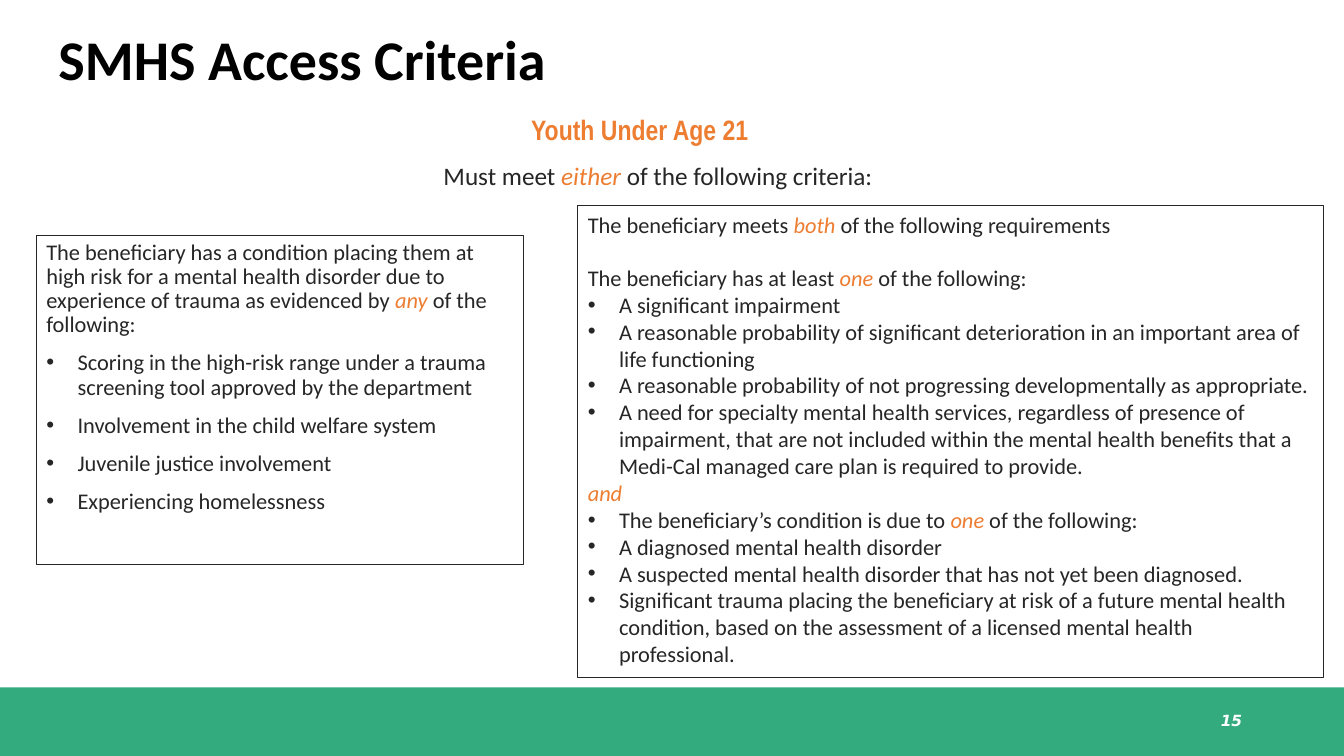
from lxml import etree
from pptx import Presentation
from pptx.dml.color import RGBColor
from pptx.enum.shapes import MSO_SHAPE
from pptx.enum.text import MSO_ANCHOR, MSO_AUTO_SIZE, PP_ALIGN
from pptx.oxml.ns import qn
from pptx.util import Pt

RECT = MSO_SHAPE.RECTANGLE
TOP, MIDDLE = MSO_ANCHOR.TOP, MSO_ANCHOR.MIDDLE
LEFT, CENTER, RIGHT = PP_ALIGN.LEFT, PP_ALIGN.CENTER, PP_ALIGN.RIGHT
FIXED = MSO_AUTO_SIZE.NONE
SCALE = 9144
INK, ACCENT, GREEN = "262626", "ED7D31", "33AB7E"

RISK = [
    "The beneficiary has a condition placing them at high risk for a mental health "
    "disorder due to experience of trauma as evidenced by *any* of the following:",
    "• Scoring in the high-risk range under a trauma screening tool approved by the department",
    "• Involvement in the child welfare system",
    "• Juvenile justice involvement",
    "• Experiencing homelessness",
]
NEEDS = [
    "The beneficiary meets *both* of the following requirements",
    "The beneficiary has at least *one* of the following:",
    "• A significant impairment",
    "• A reasonable probability of significant deterioration in an important area of life functioning",
    "• A reasonable probability of not progressing developmentally as appropriate.",
    "• A need for specialty mental health services, regardless of presence of impairment, "
    "that are not included within the mental health benefits that a Medi-Cal managed care "
    "plan is required to provide.",
    "*and*",
    "• The beneficiary’s condition is due to *one* of the following:",
    "• A diagnosed mental health disorder",
    "• A suspected mental health disorder that has not yet been diagnosed.",
    "• Significant trauma placing the beneficiary at risk of a future mental health "
    "condition, based on the assessment of a licensed mental health professional.",
]


def px(n):
    return n * SCALE


def color(code):
    return RGBColor.from_string(code)


def place(shape, box):
    shape.left, shape.top, shape.width, shape.height = map(px, box)


def setup(frame, anchor):
    frame.word_wrap = True
    frame.auto_size = FIXED
    frame.vertical_anchor = anchor


def write(para, text, size, tint=INK, face="Calibri", bold=False, align=LEFT, lead=1.0, gap=0):
    para.alignment = align
    para.line_spacing = lead
    para.space_before = Pt(gap)
    font = para.font
    font.size, font.name, font.bold = Pt(size), face, bold
    font.color.rgb = color(tint)
    for i, part in enumerate(text.split("*")):
        if part:
            run = para.add_run()
            run.text = part
            if i % 2:
                run.font.italic = True
                run.font.color.rgb = color(ACCENT)


def mark(para, dot):
    props = para._p.get_or_add_pPr()
    props.set("marL", str(px(31) if dot else 0))
    props.set("indent", str(px(-31) if dot else 0))
    if dot:
        etree.SubElement(props, qn("a:buFont")).set("typeface", "Arial")
        etree.SubElement(props, qn("a:buChar")).set("char", "•")
    else:
        etree.SubElement(props, qn("a:buNone"))


def panel(body, box, lines, lead, gaps):
    place(body, box)
    body.line.color.rgb = color(INK)
    body.line.width = Pt(0.75)
    frame = body.text_frame
    setup(frame, TOP)
    for i, line in enumerate(lines):
        para = frame.paragraphs[0] if i == 0 else frame.add_paragraph()
        mark(para, line.startswith("• "))
        write(para, line.removeprefix("• "), 16, lead=lead, gap=gaps[i])


def label(slide, box, text, size, anchor=TOP, **style):
    frame = slide.shapes.add_textbox(*map(px, box)).text_frame
    setup(frame, anchor)
    para = frame.paragraphs[0]
    write(para, text, size, **style)
    return para


def header(slide, box):
    left, top, width, height = box
    title = slide.shapes.title
    place(title, (left, top, width, 76))
    setup(title.text_frame, MIDDLE)
    write(title.text_frame.paragraphs[0], "SMHS Access Criteria", 40,
          tint="000000", bold=True, lead=0.9)
    label(slide, (left + 292, top + 86, 589, 40), "Youth Under Age 21", 20,
          tint=ACCENT, face="Arial Narrow", bold=True, align=CENTER, lead=0.9)
    label(slide, (left + 382, top + 130, 452, 40),
          "Must meet *either* of the following criteria:", 18)


def footer(slide, box):
    left, top, width, height = box
    band = slide.shapes.add_shape(RECT, *map(px, box))
    band.shadow.inherit = False
    band.fill.solid()
    band.fill.fore_color.rgb = color(GREEN)
    band.line.fill.background()
    para = label(slide, (left + 942, top + 13, 300, 40), "15", 11, anchor=MIDDLE,
                 tint="FFFFFF", face="DejaVu Sans", bold=True, align=RIGHT)
    para.font.italic = True


def main():
    deck = Presentation()
    deck.slide_width, deck.slide_height = px(1333), px(750)
    slide = deck.slides.add_slide(deck.slide_layouts[3])
    footer(slide, (0, 682, 1333, 68))
    header(slide, (48, 24, 1150, 170))
    risk, needs = slide.placeholders[1], slide.placeholders[2]
    panel(risk, (36, 234, 483, 326), RISK, 0.9, [0] + [10] * 4)
    panel(needs, (573, 204, 740, 468), NEEDS, 1.0, [0, 19] + [0] * 9)
    deck.save("out.pptx")


if __name__ == "__main__":
    main()
